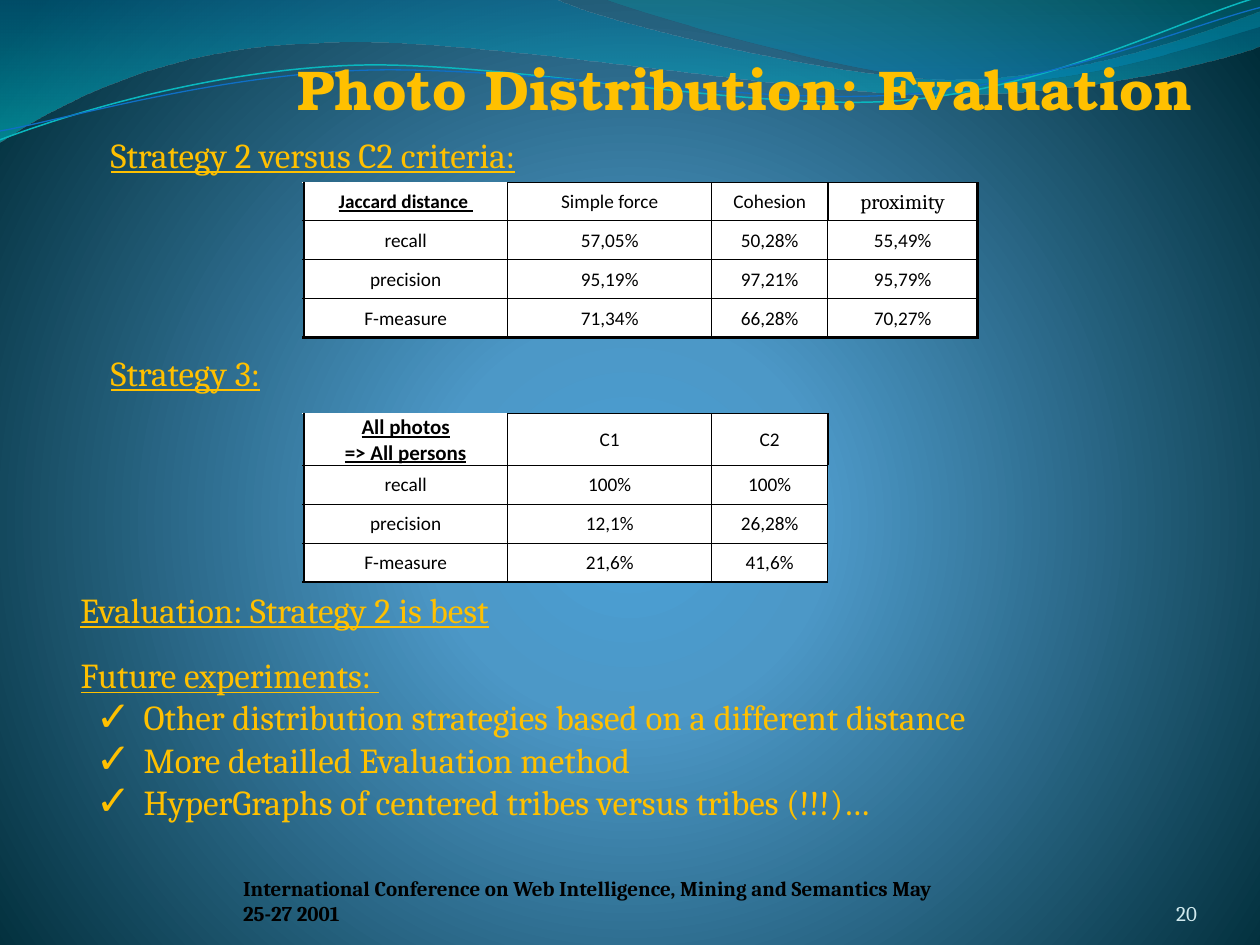
from pptx import Presentation
from pptx.util import Inches, Pt
from pptx.dml.color import RGBColor
from pptx.enum import text as t
from pptx.oxml import parse_xml
from pptx.oxml.ns import nsdecls, qn
from lxml import etree

GOLD, BLACK, WHITE = "FFC000", "000000", "FFFFFF"


def style(font, size, color, name="Cambria", bold=False, underline=False):
    font.size, font.name, font.bold, font.underline = Pt(size), name, bold, underline
    font.color.rgb = RGBColor.from_string(color)


def set_gradient(grad, stops, direction):
    marks = "".join(
        f'<a:gs pos="{pos * 1000}"><a:srgbClr val="{color}"><a:alpha val="{alpha * 1000}"/></a:srgbClr></a:gs>'
        for pos, color, alpha in stops)
    grad.getparent().replace(grad, parse_xml(
        f'<a:gradFill {nsdecls("a")} rotWithShape="1"><a:gsLst>{marks}</a:gsLst>{direction}</a:gradFill>'))


prs = Presentation()
prs.slide_width, prs.slide_height = Inches(10), Inches(7.5)
slide = prs.slides.add_slide(prs.slide_layouts[1])
shapes = slide.shapes

slide.background.fill.gradient()
set_gradient(next(slide._element.iter(qn("a:gradFill"))),
             [(0, "4AA0D6", 100), (25, "4C98C7", 100), (100, "002C38", 100)],
             '<a:path path="circle"><a:fillToRect l="10000" t="110000" r="10000" b="100000"/></a:path>')

waves = [
    ((0, 0), [(4.4, -0.01), (4.76, 0.17, 6.64, 0.63, 7.58, 0.63), (8.53, 0.63, 9.58, 0.26, 10, 0.09),
              (10.01, 0.36), (9.83, 0.44, 8.7, 0.76, 7.46, 0.75), (6.22, 0.75, 3.82, 0.28, 2.57, 0.34),
              (1.29, 0.36, 0.46, 0.83, -0.01, 1.13)],
     [(0, "0074A1", 45), (100, "00C6CF", 55)], None),
    ((4.79, -0.01), [(5.09, 0.11, 6.82, 0.62, 7.69, 0.65), (8.56, 0.69, 9.61, 0.32, 10, 0.21), (10, 0)],
     [(0, "00A1A9", 30), (80, "008BBF", 45)], None),
    ((0, 1.11), [(0.48, 0.93, 1.58, 0.57, 2.77, 0.52), (3.95, 0.47, 5.93, 0.89, 7.13, 0.8),
                 (8.33, 0.71, 9.38, 0.15, 9.98, -0.02)], None, ("0AB8BF", 0.85)),
    ((0, 1.04), [(0.47, 0.96, 1.64, 0.61, 2.83, 0.56), (4.03, 0.51, 5.97, 0.84, 7.17, 0.75),
                 (8.36, 0.67, 9.41, 0.21, 10, 0.06)], None, ("0F6FC6", 0.75)),
]
for start, steps, stops, stroke in waves:
    builder = shapes.build_freeform(Inches(start[0]), Inches(start[1]))
    builder.add_line_segments([(Inches(x), Inches(y)) for step in steps
                               for x, y in zip(step[::2], step[1::2])], close=stops is not None)
    wave = builder.convert_to_shape()
    wave.shadow.inherit = False
    segments = iter(list(wave._element.iter(qn("a:lnTo"))))
    for step in steps:
        parts = [next(segments) for _ in step[::2]]
        if len(parts) == 3:
            curve = etree.Element(qn("a:cubicBezTo"))
            parts[0].addprevious(curve)
            for part in parts:
                curve.append(part[0])
                part.getparent().remove(part)
    if stops:
        wave.fill.gradient()
        set_gradient(wave._element.spPr.find(qn("a:gradFill")), stops, '<a:lin ang="5400000" scaled="1"/>')
        wave.line.fill.background()
    else:
        wave.fill.background()
        wave.line.color.rgb = RGBColor.from_string(stroke[0])
        wave.line.width = Pt(stroke[1])

title = shapes.title
title.left, title.top, title.width, title.height = Inches(1.77), Inches(-0.11), Inches(7.95), Inches(1.4)
heading = title.text_frame
heading.text = "Photo Distribution: Evaluation "
heading.vertical_anchor = t.MSO_ANCHOR.MIDDLE
heading.margin_top = Inches(0.27)
heading.paragraphs[0].alignment = t.PP_ALIGN.RIGHT
style(heading.paragraphs[0].runs[0].font, 32, GOLD, "TeX Gyre Bonum", bold=True)
shapes._spTree.append(title._element)

for words, left, top, width, height in [
        ("Strategy 2 versus C2 criteria:", 0.28, 1.01, 6.61, 0.77),
        ("Strategy 3:", 0.28, 2.74, 6.61, 0.77),
        ("Evaluation: Strategy 2 is best", 0.04, 4.62, 9.13, 0.44)]:
    caption = shapes.add_textbox(Inches(left), Inches(top), Inches(width), Inches(height)).text_frame
    caption.word_wrap = True
    caption.text = words
    paragraph = caption.paragraphs[0]
    paragraph.level = 1
    paragraph._p.get_or_add_pPr().set("marL", str(Inches(0.5)))
    style(paragraph.runs[0].font, 20, GOLD, underline=True)

col_widths = [1.62, 1.62, 0.92, 1.19]
results = [
    (1.45, 0.3, 11, [
        ["Jaccard distance ", "Simple force", "Cohesion", "proximity"],
        ["recall", "57,05%", "50,28%", "55,49%"],
        ["precision", "95,19%", "97,21%", "95,79%"],
        ["F-measure", "71,34%", "66,28%", "70,27%"]]),
    (3.28, 0.4, 12, [
        ["All photos\v=> All persons", "C1", "C2"],
        ["recall", "100%", "100%"],
        ["precision", "12,1%", "26,28%"],
        ["F-measure", "21,6%", "41,6%"]]),
]
for top, header_height, corner_size, rows in results:
    widths = col_widths[:len(rows[0])]
    heights = [header_height, 0.31, 0.31, 0.31]
    grid = shapes.add_table(len(rows), len(widths), Inches(2.41), Inches(top),
                            Inches(sum(widths)), Inches(sum(heights))).table
    grid.first_row = grid.horz_banding = False
    for column, width in zip(grid.columns, widths):
        column.width = Inches(width)
    for r, row in enumerate(rows):
        grid.rows[r].height = Inches(heights[r])
        for c, value in enumerate(row):
            cell = grid.cell(r, c)
            cell.text_frame.text = value
            cell.vertical_anchor = t.MSO_ANCHOR.MIDDLE
            cell.margin_left = cell.margin_right = cell.margin_top = Inches(0.01)
            cell.margin_bottom = 0
            corner = r == c == 0
            paragraph = cell.text_frame.paragraphs[0]
            paragraph.alignment = t.PP_ALIGN.CENTER
            for run in paragraph.runs:
                if value == "proximity":
                    style(run.font, 12, BLACK)
                else:
                    style(run.font, corner_size if corner else 11, BLACK, "Calibri", corner, corner)
            thick_right = c == 3 or (c == 2 and r == 0)
            borders = {"L": 1.5 if c == 0 else 0.5, "R": 1.5 if thick_right else 0.5,
                       "T": 0 if corner else 0.5, "B": 1.5 if r == len(rows) - 1 else 0.5}
            for side, weight in borders.items():
                if weight:
                    cell._tc.get_or_add_tcPr().append(parse_xml(
                        f'<a:ln{side} {nsdecls("a")} w="{Pt(weight)}"><a:solidFill>'
                        f'<a:srgbClr val="{BLACK}"/></a:solidFill></a:ln{side}>'))
            cell.fill.solid()
            cell.fill.fore_color.rgb = RGBColor.from_string(WHITE)

plans = slide.placeholders[1]
plans.left, plans.top, plans.width, plans.height = Inches(0.04), Inches(5.14), Inches(9.13), Inches(1.45)
plans.text_frame.auto_size = t.MSO_AUTO_SIZE.NONE
plans.text_frame.text = "\n".join([
    "Future experiments: ",
    "Other distribution strategies based on a different distance",
    "More detailled Evaluation method",
    "HyperGraphs of centered tribes versus tribes (!!!)…"])
for i, paragraph in enumerate(plans.text_frame.paragraphs):
    paragraph.level = 2 if i else 1
    paragraph.space_before = Pt(0)
    props = paragraph._p.get_or_add_pPr()
    props.set("marL", str(Inches(1 if i else 0.5)))
    props.set("indent", str(Inches(-0.38 if i else 0)))
    if i:
        etree.SubElement(props, qn("a:buSzPct")).set("val", "120000")
        etree.SubElement(props, qn("a:buChar")).set("char", "✓")
    else:
        etree.SubElement(props, qn("a:buNone"))
    style(paragraph.runs[0].font, 20, GOLD, underline=i == 0)

for words, left, width, color, bold, align in [
        ("International Conference on Web Intelligence, Mining and Semantics May 25-27 2001",
         1.93, 5.67, BLACK, True, t.PP_ALIGN.LEFT),
        ("20", 8.67, 0.83, "D1EAEE", False, t.PP_ALIGN.RIGHT)]:
    footer = shapes.add_textbox(Inches(left), Inches(6.95), Inches(width), Inches(0.4)).text_frame
    footer.word_wrap = True
    footer.vertical_anchor = t.MSO_ANCHOR.BOTTOM
    footer.margin_left = footer.margin_right = footer.margin_top = footer.margin_bottom = 0
    footer.text = words
    footer.paragraphs[0].alignment = align
    style(footer.paragraphs[0].runs[0].font, 12, color, bold=bold)

prs.save("out.pptx")
